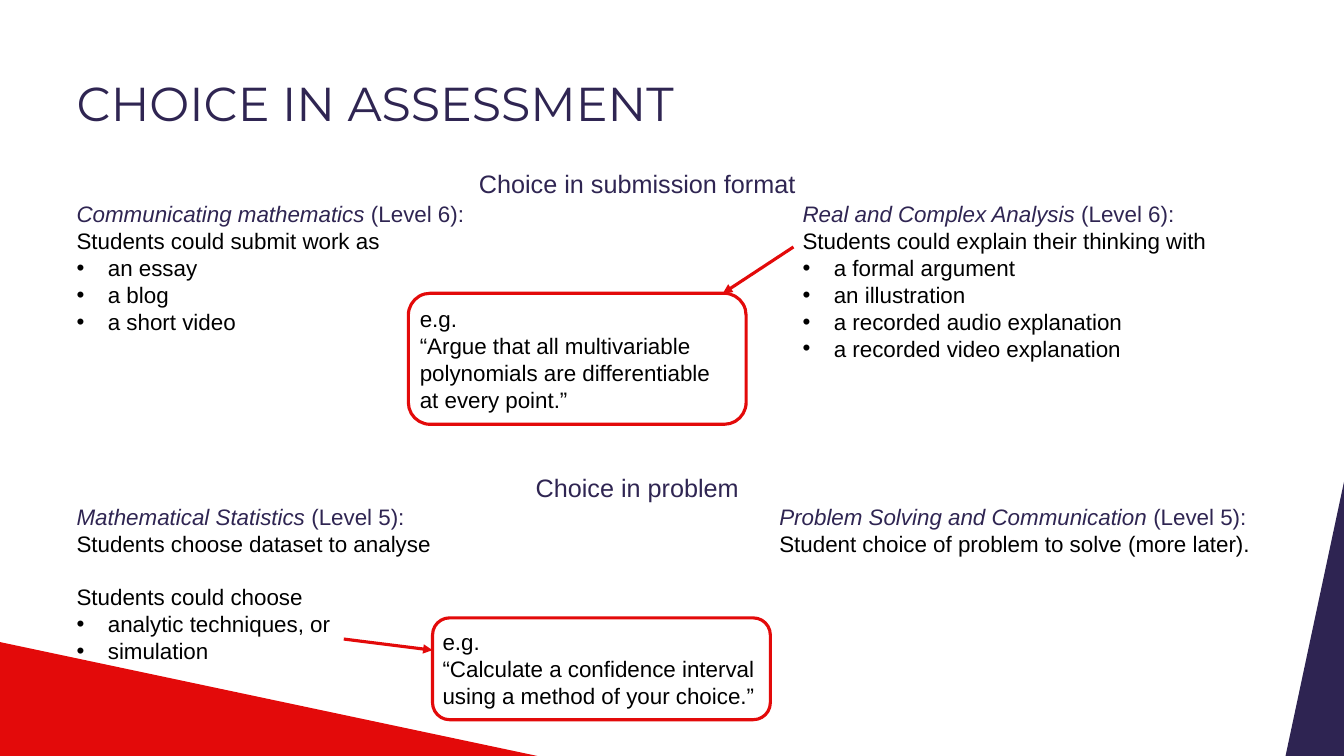
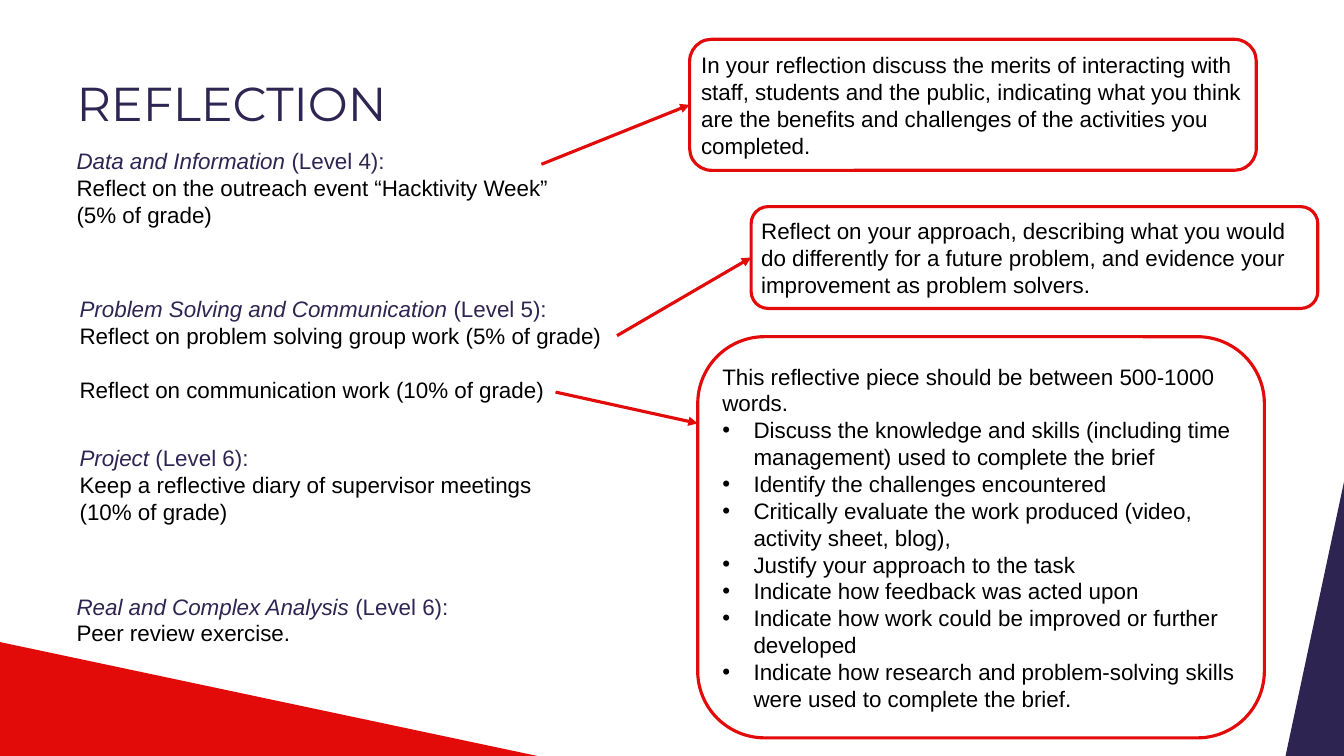
from lxml import etree
from pptx import Presentation
from pptx.dml.color import RGBColor
from pptx.enum import shapes, text
from pptx.oxml import ns
from pptx.util import Inches, Pt

RED = RGBColor(0xE3, 0x0A, 0x0A)
DARK = RGBColor(0x2E, 0x24, 0x52)
NAVY = RGBColor(0x2F, 0x25, 0x52)
BLACK = RGBColor(0, 0, 0)
WHITE = RGBColor(255, 255, 255)
WIDE, HIGH = 13.33, 7.5
LEADING = 1.2
BODY = 16

WEDGES = [
    (RED, [(0, 6.37), (5.33, HIGH), (0, HIGH)]),
    (DARK, [(WIDE, 4.78), (WIDE, HIGH), (12.75, HIGH)]),
]

# In body lines, a list holds bullets and None leaves a one-line gap.
SLIDES = [
    {
        "title": "CHOICE IN ASSESSMENT",
        "heads": [(1.67, "Choice in submission format"), (4.69, "Choice in problem")],
        "courses": [
            ((0.76, 1.99, 3.91, 1.46), "Communicating mathematics", 6,
             ["Students could submit work as",
              ["an essay", "a blog", "a short video"]]),
            ((7.96, 1.99, 4.61, 1.67), "Real and Complex Analysis", 6,
             ["Students could explain their thinking with",
              ["a formal argument", "an illustration",
               "a recorded audio explanation", "a recorded video explanation"]]),
            ((0.76, 4.99, 3.91, 1.46), "Mathematical Statistics", 5,
             ["Students choose dataset to analyse", None, "Students could choose",
              ["analytic techniques, or", "simulation"]]),
            ((7.73, 4.99, 4.84, 1.46), "Problem Solving and Communication", 5,
             ["Student choice of problem to solve (more later)."]),
        ],
        "notes": [
            ((4.05, 2.91, 3.35, 1.3), (7.87, 2.45), (7.17, 2.91),
             ["e.g.", "“Argue that all multivariable polynomials are "
              "differentiable at every point.”"]),
            ((4.29, 6.13, 3.35, 1.01), (3.41, 6.34), (4.29, 6.45),
             ["e.g.", "“Calculate a confidence interval using a method of your choice.”"]),
        ],
    },
    {
        "title": "REFLECTION",
        "heads": [],
        "courses": [
            ((0.76, 1.46, 4.84, 1.46), "Data and Information", 4,
             ["Reflect on the outreach event “Hacktivity Week”", "(5% of grade)"]),
            ((0.79, 2.93, 5.3, 1.46), "Problem Solving and Communication", 5,
             ["Reflect on problem solving group work (5% of grade)", None,
              "Reflect on communication work (10% of grade)"]),
            ((0.79, 4.41, 4.84, 1.46), "Project", 6,
             ["Keep a reflective diary of supervisor meetings (10% of grade)"]),
            ((0.76, 5.88, 4.61, 0.56), "Real and Complex Analysis", 6,
             ["Peer review exercise."]),
        ],
        "notes": [
            ((6.84, 0.39, 5.62, 1.3), (5.37, 1.63), None,
             ["In your reflection discuss the merits of interacting with staff, "
              "students and the public, indicating what you think are the benefits "
              "and challenges of the activities you completed."]),
            ((7.45, 2.05, 5.62, 1.01), (6.12, 3.33), None,
             ["Reflect on your approach, describing what you would do differently "
              "for a future problem, and evidence your improvement as problem solvers."]),
            ((6.92, 3.34, 5.62, 3.98), (5.51, 3.89), (6.92, 4.2),
             ["This reflective piece should be between 500-1000 words.",
              ["Discuss the knowledge and skills (including time management) used "
               "to complete the brief",
               "Identify the challenges encountered",
               "Critically evaluate the work produced (video, activity sheet, blog),",
               "Justify your approach to the task",
               "Indicate how feedback was acted upon",
               "Indicate how work could be improved or further developed",
               "Indicate how research and problem-solving skills were used to "
               "complete the brief."]]),
        ],
    },
]


def inches(nums):
    return [Inches(n) for n in nums]


def child(node, tag, **attrs):
    return etree.SubElement(node, ns.qn(tag), attrs)


def setup(frame, inset, anchor):
    frame.word_wrap = True
    frame.vertical_anchor = anchor
    frame.margin_left = frame.margin_right = Inches(inset)
    frame.margin_top = frame.margin_bottom = Inches(inset)


def style(para, size, color, face="Arial"):
    para.font.size, para.font.name = Pt(size), face
    para.font.color.rgb = color
    para.line_spacing = Pt(size * LEADING)
    para.alignment = text.PP_ALIGN.LEFT


def box(slide, place, anchor=text.MSO_ANCHOR.TOP):
    frame = slide.shapes.add_textbox(*inches(place)).text_frame
    setup(frame, 0, anchor)
    return frame


def bullet(para):
    props = para._p.get_or_add_pPr()
    props.set("marL", str(Inches(0.31)))
    props.set("indent", str(-Inches(0.31)))
    child(props, "a:buFont", typeface="Arial")
    child(props, "a:buChar", char="•")


def write(frame, lines, fresh):
    gap = False
    for line in lines:
        if line is None:
            gap = True
            continue
        listed = isinstance(line, list)
        for item in line if listed else [line]:
            para = frame.paragraphs[0] if fresh else frame.add_paragraph()
            fresh = False
            para.text = item
            style(para, BODY, BLACK)
            if gap:
                para.space_before = Pt(BODY * LEADING)
                gap = False
            if listed:
                bullet(para)


def wedge(slide, color, points):
    first, *rest = [inches(p) for p in points]
    build = slide.shapes.build_freeform(*first)
    build.add_line_segments(rest, close=True)
    shape = build.convert_to_shape()
    shape.shadow.inherit = False
    shape.fill.solid()
    shape.fill.fore_color.rgb = color
    shape.line.fill.background()


def title(slide, words):
    para = box(slide, (0.76, 0.48, 11.11, 0.83), text.MSO_ANCHOR.BOTTOM).paragraphs[0]
    para.text = words
    style(para, 34, NAVY, "Montserrat")
    para.line_spacing = 0.9


def head(slide, top, words):
    para = box(slide, (4.56, top, 3.52, 0.3)).paragraphs[0]
    para.text = words
    style(para, 18, NAVY)
    para.alignment = text.PP_ALIGN.CENTER


def course(slide, place, name, level, lines):
    frame = box(slide, place)
    para = frame.paragraphs[0]
    style(para, BODY, NAVY)
    run = para.add_run()
    run.text = name + " "
    run.font.italic = True
    para.add_run().text = f"(Level {level}):"
    write(frame, lines, False)


def note(slide, place, start, end, lines):
    shape = slide.shapes.add_shape(shapes.MSO_SHAPE.ROUNDED_RECTANGLE, *inches(place))
    shape.shadow.inherit = False
    shape.fill.solid()
    shape.fill.fore_color.rgb = WHITE
    shape.line.color.rgb = RED
    shape.line.width = Pt(2.25)
    setup(shape.text_frame, 0.05, text.MSO_ANCHOR.MIDDLE)
    write(shape.text_frame, lines, True)

    left, top, _, height = place
    goal = end or (left, top + height / 2)
    arrow = slide.shapes.add_connector(shapes.MSO_CONNECTOR.STRAIGHT, *inches(start + goal))
    if end is None:
        arrow.end_connect(shape, 1)
    arrow.line.color.rgb = RED
    arrow.line.width = Pt(2.25)
    child(arrow.line._get_or_add_ln(), "a:tailEnd", type="triangle")
    child(arrow._element.spPr, "a:effectLst")


def main():
    deck = Presentation()
    deck.slide_width, deck.slide_height = inches((WIDE, HIGH))
    for data in SLIDES:
        slide = deck.slides.add_slide(deck.slide_layouts[6])
        for item in WEDGES:
            wedge(slide, *item)
        title(slide, data["title"])
        for draw, key in ((head, "heads"), (course, "courses"), (note, "notes")):
            for item in data[key]:
                draw(slide, *item)
    deck.save("out.pptx")


if __name__ == "__main__":
    main()
